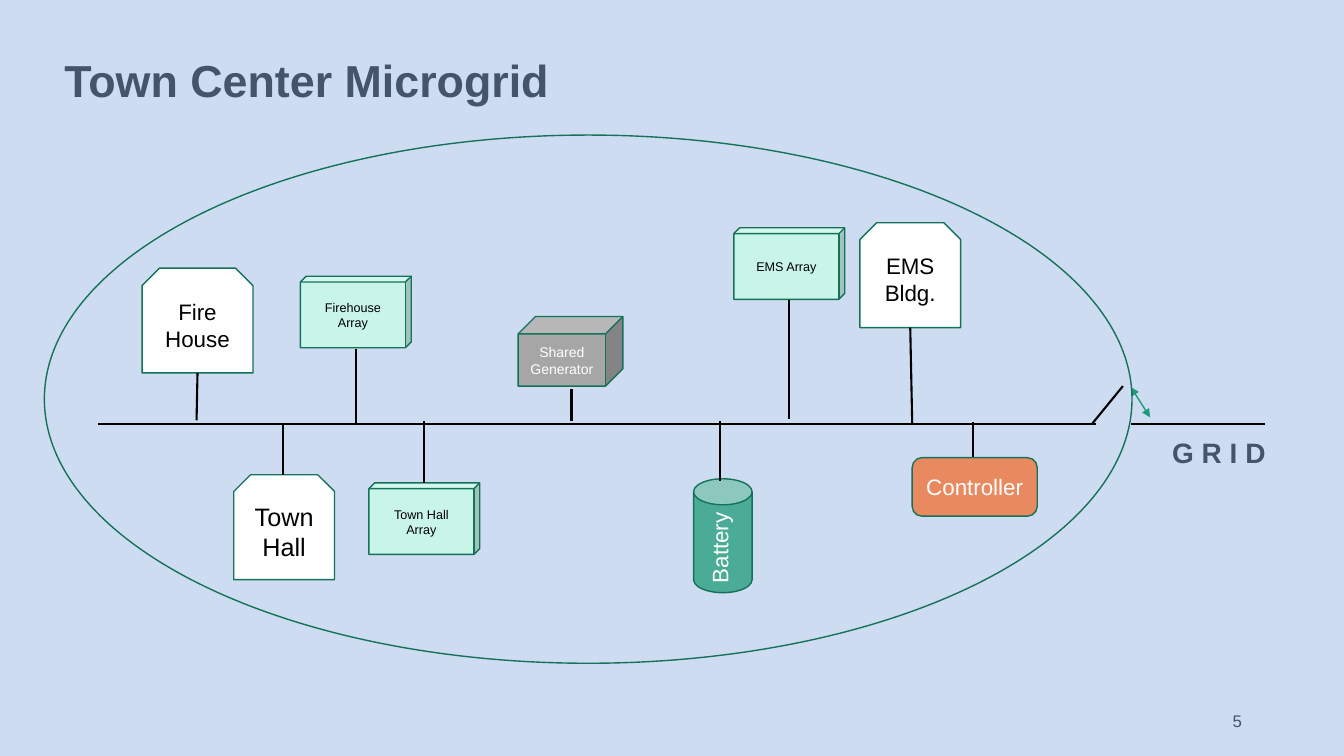
from lxml import etree
from pptx import Presentation
from pptx.dml.color import RGBColor
from pptx.enum.shapes import MSO_CONNECTOR, MSO_SHAPE
from pptx.enum.text import MSO_ANCHOR, PP_ALIGN
from pptx.oxml.ns import qn
from pptx.util import Pt

CUBE = MSO_SHAPE.CUBE
BUILDING = MSO_SHAPE.SNIP_2_SAME_RECTANGLE
CAN = MSO_SHAPE.CAN
ROUNDED = MSO_SHAPE.ROUNDED_RECTANGLE
ELLIPSE = MSO_SHAPE.OVAL
STRAIGHT = MSO_CONNECTOR.STRAIGHT
LEFT, CENTER, RIGHT = PP_ALIGN.LEFT, PP_ALIGN.CENTER, PP_ALIGN.RIGHT
TOP, MIDDLE = MSO_ANCHOR.TOP, MSO_ANCHOR.MIDDLE

FONT = "Arial"
COLORS = {
    "background": "CDDCF1",
    "heading": "44546A",
    "outline": "157259",
    "green": "1D9A78",
    "mint": "C8F5E8",
    "gray": "A6A6A6",
    "orange": "E98960",
    "white": "FFFFFF",
    "black": "000000",
}
BUS_Y = 303.1

# left, top, width, text, size
BUILDINGS = [
    (101.5, 191.5, 79.2, "Fire House", 16),
    (614.2, 159.1, 72, "EMS Bldg.", 16),
    (167, 339.1, 72, "Town Hall", 18),
]
# left, top, text
ARRAYS = [
    (214.6, 197.3, "Firehouse Array"),
    (524.2, 162.7, "EMS Array"),
    (263.5, 344.9, "Town Hall Array"),
]
# start x, start y, end x, end y
WIRES = [
    (69.8, BUS_Y, 782.6, BUS_Y),
    (514.1, 301, 514.1, 343.4),
    (650.2, 234, 651.6, BUS_Y),
    (563.8, 214.6, 563.8, 299.5),
    (694.8, 301.7, 694.8, 326.2),
    (141.1, 266.4, 140.4, 300.2),
    (254.2, 249.1, 254.2, BUS_Y),
    (408.2, 277.9, 408.2, 301),
    (303.1, 301, 303.1, 344.9),
    (202.3, BUS_Y, 202.3, 339.1),
    (802.1, 275.8, 779.8, BUS_Y),
    (903.6, BUS_Y, 807.8, BUS_Y),
]


def rgb(name):
    return RGBColor.from_string(COLORS[name])


def write_text(shape, text, size, color, align, anchor, bold=False):
    frame = shape.text_frame
    frame.word_wrap = True
    frame.vertical_anchor = anchor
    paragraph = frame.paragraphs[0]
    paragraph.text = text
    paragraph.alignment = align
    font = paragraph.font
    font.name, font.size, font.bold = FONT, Pt(size), bold
    font.color.rgb = rgb(color)
    return paragraph


def add_label(slide, box, text, size, color, align=LEFT, anchor=TOP, bold=False):
    label = slide.shapes.add_textbox(*map(Pt, box))
    write_text(label, text, size, color, align, anchor, bold)
    return label


def add_node(slide, kind, box, fill=None, text="", size=16, color="white", adjust=None):
    node = slide.shapes.add_shape(kind, *map(Pt, box))
    node.shadow.inherit = False
    if fill:
        node.fill.solid()
        node.fill.fore_color.rgb = rgb(fill)
    else:
        node.fill.background()
    node.line.color.rgb = rgb("outline")
    node.line.width = Pt(1)
    if adjust is not None:
        node.adjustments[0] = adjust
    if text:
        write_text(node, text, size, color, CENTER, MIDDLE)
    return node


def add_line(slide, ends, color="black", width=1.5, arrows=False):
    line = slide.shapes.add_connector(STRAIGHT, *map(Pt, ends))
    line.line.color.rgb = rgb(color)
    line.line.width = Pt(width)
    if arrows:
        outline = line.line._get_or_add_ln()
        for end in ("a:headEnd", "a:tailEnd"):
            etree.SubElement(outline, qn(end), type="triangle")
    etree.SubElement(line._element.spPr, qn("a:effectLst"))


def set_opacity(shape, percent):
    color = shape._element.spPr.find(qn("a:solidFill"))[0]
    etree.SubElement(color, qn("a:alpha"), val=str(percent * 1000))


def main():
    presentation = Presentation()
    presentation.slide_width, presentation.slide_height = Pt(960), Pt(540)
    slide = presentation.slides.add_slide(presentation.slide_layouts[6])
    slide.background.fill.solid()
    slide.background.fill.fore_color.rgb = rgb("background")

    title = add_label(slide, (38.9, 24.5, 828, 69.8), "Town Center Microgrid",
                      32, "heading", anchor=MIDDLE, bold=True)
    title.text_frame.paragraphs[0].line_spacing = 0.9

    add_node(slide, CUBE, (370.1, 226.1, 74.9, 49.7), "gray", "Shared Generator", 10)
    for left, top, width, text, size in BUILDINGS:
        add_node(slide, BUILDING, (left, top, width, 74.9), "white", text, size, "black")
    for left, top, text in ARRAYS:
        add_node(slide, CUBE, (left, top, 79.2, 51.1), "mint", text, 9, "black", 0.082)

    battery = add_node(slide, CAN, (495.4, 342, 41.8, 81.4), "green", adjust=0.445)
    set_opacity(battery, 74)
    battery_label = add_label(slide, (474.5, 370.8, 79.2, 26.6), "Battery", 16, "white")
    battery_label.rotation = 270
    add_node(slide, ROUNDED, (651.6, 326.9, 89.3, 41.8), "orange", "Controller")

    for ends in WIRES:
        add_line(slide, ends)
    add_line(slide, (807.8, 276.5, 821.5, 300.2 - 2.1), "green", 1, arrows=True)
    add_label(slide, (830.2, 307.4, 95.8, 31.7), "G R I D", 20, "heading", bold=True)
    add_node(slide, ELLIPSE, (31.7, 96.5, 776.9, 377.3))
    add_label(slide, (678.2, 500.4, 216, 28.8), "5", 12, "heading", RIGHT, MIDDLE)

    presentation.save("out.pptx")


if __name__ == "__main__":
    main()
